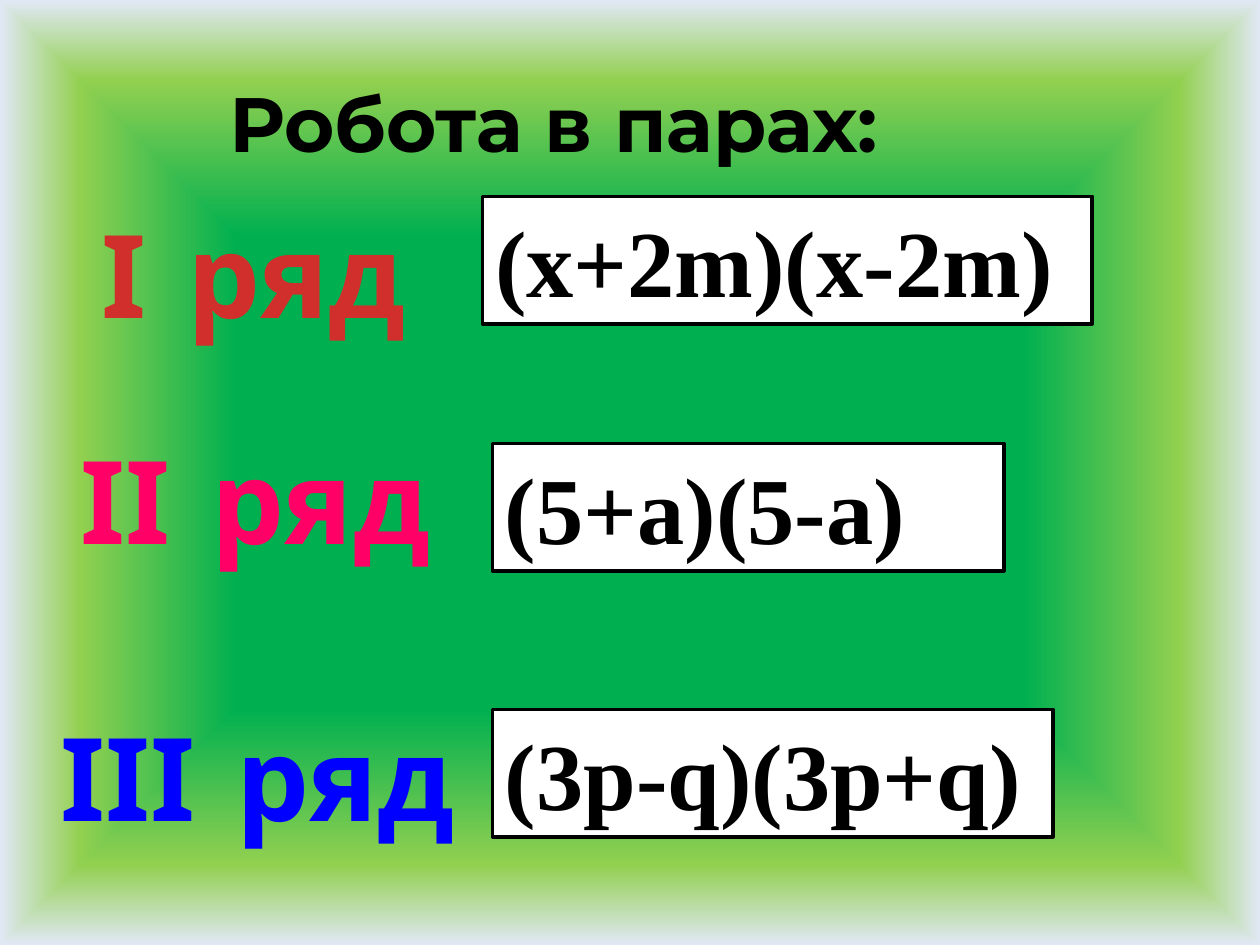
from pptx import Presentation
from pptx.dml.color import RGBColor
from pptx.enum.shapes import MSO_SHAPE
from pptx.enum.text import MSO_ANCHOR, MSO_AUTO_SIZE, PP_ALIGN
from pptx.oxml import parse_xml
from pptx.oxml.ns import nsdecls
from pptx.util import Cm, Pt

COLORS = {
    "black": "000000", "white": "FFFFFF",
    "green": "00B050", "lime": "92D050", "mist": "E1E8F5",
    "rose": "FC7C7A", "red": "D02F2C", "crimson": "C70500",
    "pink": "FF0066", "blue": "0000FF",
}


def gradient_xml(stops, direction):
    gs = "".join(
        f'<a:gs pos="{pos * 1000}"><a:srgbClr val="{COLORS[name]}"/></a:gs>'
        for pos, name in stops
    )
    return f'<a:gradFill {nsdecls("a")} rotWithShape="1"><a:gsLst>{gs}</a:gsLst>{direction}</a:gradFill>'


def add_text(text, left, top, width, height, size, font, color="black",
             gradient=None, align=PP_ALIGN.LEFT, wrap=True, boxed=False):
    box = [Cm(v) for v in (left, top, width, height)]
    if boxed:
        sp = slide.shapes.add_shape(MSO_SHAPE.RECTANGLE, *box)
        sp.shadow.inherit = False
        sp.fill.solid()
        sp.fill.fore_color.rgb = RGBColor.from_string(COLORS["white"])
        sp.line.color.rgb = RGBColor.from_string(COLORS["black"])
        sp.line.width = Pt(2)
    else:
        sp = slide.shapes.add_textbox(*box)
    tf = sp.text_frame
    tf.word_wrap = wrap
    tf.auto_size = MSO_AUTO_SIZE.SHAPE_TO_FIT_TEXT
    tf.vertical_anchor = MSO_ANCHOR.TOP
    p = tf.paragraphs[0]
    p.alignment = align
    r = p.add_run()
    r.text = text
    r.font.size = Pt(size)
    r.font.name = font
    r.font.bold = True
    if gradient:
        r.font._element.insert(0, parse_xml(gradient))
    else:
        r.font.color.rgb = RGBColor.from_string(COLORS[color])


prs = Presentation()
prs.slide_width, prs.slide_height = Cm(25.4), Cm(19.05)
slide = prs.slides.add_slide(prs.slide_layouts[6])

bg_fill = gradient_xml(
    [(50, "green"), (83, "lime"), (100, "mist")],
    '<a:path path="shape"><a:fillToRect l="50000" t="50000" r="50000" b="50000"/></a:path>',
)
slide.element.cSld.insert(0, parse_xml(
    f'<p:bg {nsdecls("p", "a")}><p:bgPr>{bg_fill}<a:effectLst/></p:bgPr></p:bg>'
))

formulas = [
    ("(x+2m)(x-2m)", 9.73, 3.96, 12.29),
    ("(5+a)(5-a)", 9.93, 8.94, 10.31),
    ("(3p-q)(3p+q)", 9.93, 14.3, 11.3),
]
for text, left, top, width in formulas:
    add_text(text, left, top, width, 2.57, size=54, font="Times New Roman", boxed=True)

add_text("Робота в парах:", 4.37, 1.4, 17.27, 2.13, size=44, font="Montserrat")

red_gradient = gradient_xml(
    [(0, "rose"), (75, "red"), (100, "crimson")], '<a:lin ang="5400000" scaled="0"/>'
)
rows = [
    ("І ряд", 1.78, 3.96, 6.65, "red", red_gradient),
    ("ІІ ряд", 1.19, 8.53, 7.92, "pink", None),
    ("ІІІ ряд", 0.58, 14.1, 9.22, "blue", None),
]
for text, left, top, width, color, gradient in rows:
    add_text(text, left, top, width, 3.07, size=66, font="Comic Neue", color=color,
             gradient=gradient, align=PP_ALIGN.CENTER, wrap=False)

prs.save("out.pptx")
